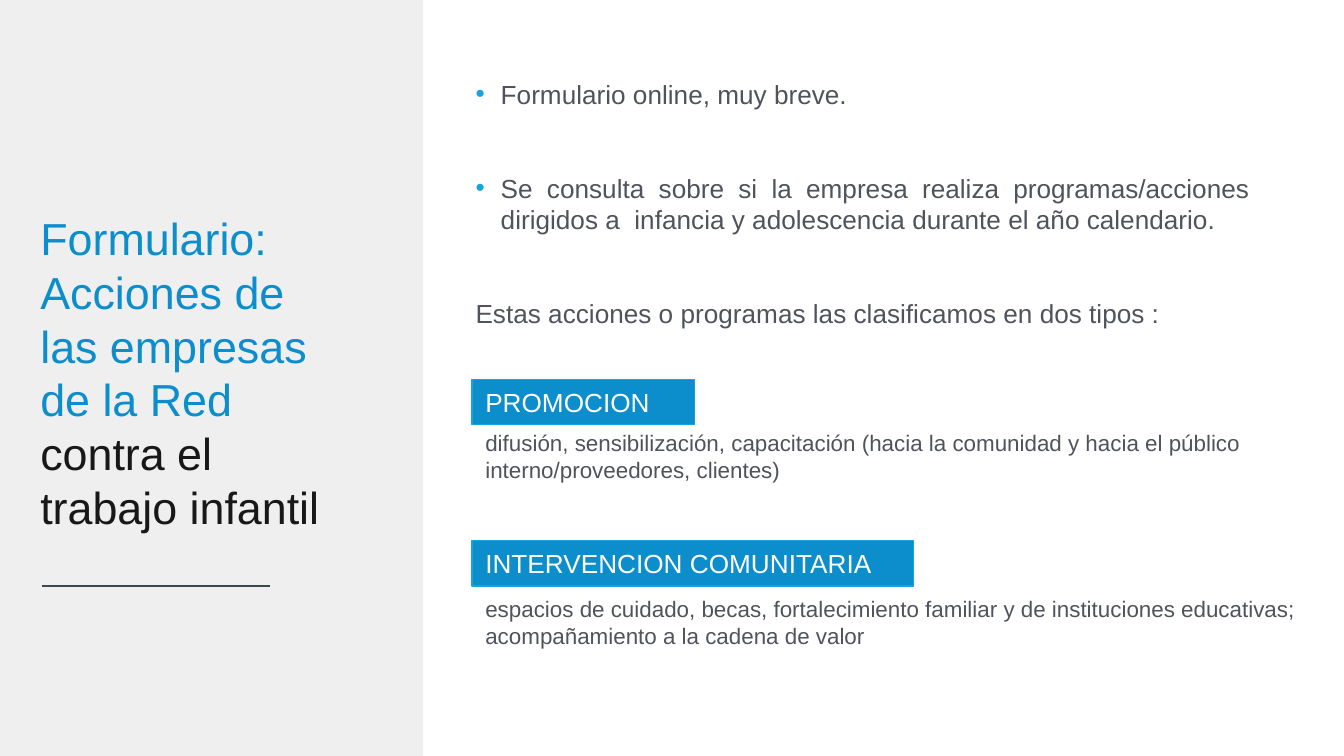
from dataclasses import dataclass

from lxml.etree import SubElement
from pptx import Presentation
from pptx.dml.color import RGBColor as RGB
from pptx.enum.shapes import MSO_CONNECTOR as CONN, MSO_SHAPE as SHAPE
from pptx.enum.text import MSO_ANCHOR as ANCHOR, MSO_AUTO_SIZE as AUTO, PP_ALIGN as ALIGN
from pptx.oxml.ns import qn
from pptx.util import Pt


@dataclass(frozen=True)
class Theme:
    """Colours, font and type sizes of the slide."""
    font: str = "Arial"
    panel: str = "EFEFEF"
    blue: str = "0C8DCC"
    accent: str = "14A4DE"
    dark: str = "181818"
    rule: str = "3A4950"
    body: str = "50535C"
    white: str = "FFFFFF"
    title_size: float = 24
    text_size: float = 14
    note_size: float = 12
    leading: float = 1.2


@dataclass(frozen=True)
class Box:
    """A rectangle in points."""
    left: float
    top: float
    width: float
    height: float

    def emu(self) -> tuple:
        """Return the four lengths for python-pptx."""
        return Pt(self.left), Pt(self.top), Pt(self.width), Pt(self.height)


@dataclass(frozen=True)
class Point:
    """A paragraph of the main text."""
    text: str
    bulleted: bool
    before: float


@dataclass(frozen=True)
class Category:
    """A type of action: its label and its explanation."""
    label: str
    label_box: Box
    note: str
    note_box: Box


T = Theme()
GAP = 2 * T.text_size * T.leading
POINTS = (
    Point("Formulario online, muy breve.", True, 0),
    Point("Se consulta sobre si la empresa realiza programas/acciones dirigidos a  "
          "infancia y adolescencia durante el año calendario.", True, GAP),
    Point("Estas acciones o programas las clasificamos en dos tipos :", False, GAP),
)
CATEGORIES = (
    Category("PROMOCION", Box(252.9, 203.2, 119.1, 24.3),
             "difusión, sensibilización, capacitación (hacia la comunidad y hacia "
             "el público interno/proveedores, clientes)", Box(252.9, 226.4, 445.7, 36)),
    Category("INTERVENCION COMUNITARIA", Box(252.9, 289.6, 236.5, 24.3),
             "espacios de cuidado, becas, fortalecimiento familiar y de instituciones "
             "educativas; acompañamiento a la cadena de valor", Box(252.9, 315.4, 452.2, 36)),
)


def add_run(p, text: str, size: float, color: str) -> None:
    """Append a formatted run and set the line pitch of its paragraph."""
    p.line_spacing = Pt(size * T.leading)
    r = p.add_run()
    r.text = text
    r.font.name, r.font.size = T.font, Pt(size)
    r.font.color.rgb = RGB.from_string(color)


def set_frame(tf, anchor=ANCHOR.TOP) -> None:
    """Give a text frame wrapping, a fixed size and an anchor."""
    tf.word_wrap = True
    tf.auto_size = AUTO.NONE
    tf.vertical_anchor = anchor


def add_rect(s, box: Box, fill: str, line: str = ""):
    """Draw a filled rectangle with an optional outline."""
    sp = s.shapes.add_shape(SHAPE.RECTANGLE, *box.emu())
    sp.shadow.inherit = False
    sp.fill.solid()
    sp.fill.fore_color.rgb = RGB.from_string(fill)
    if line:
        sp.line.color.rgb = RGB.from_string(line)
        sp.line.width = Pt(0.75)
    else:
        sp.line.fill.background()
    return sp


def add_text(s, box: Box):
    """Add an empty wrapped text box and return its frame."""
    tf = s.shapes.add_textbox(*box.emu()).text_frame
    set_frame(tf)
    return tf


def add_bullet(p) -> None:
    """Give a paragraph a hanging coloured bullet."""
    pPr = p._p.get_or_add_pPr()
    pPr.set("marL", str(Pt(13.5)))
    pPr.set("indent", str(-Pt(13.5)))
    color = SubElement(pPr, qn("a:buClr"))
    SubElement(color, qn("a:srgbClr"), val=T.accent)
    SubElement(pPr, qn("a:buFont"), typeface=T.font)
    SubElement(pPr, qn("a:buChar"), char="•")


def add_title(s) -> None:
    """Fill the title placeholder over the side panel."""
    sp = s.shapes.title
    sp._element.addprevious(add_rect(s, Box(0, 0, 226.7, 405), T.panel)._element)
    sp.left, sp.top, sp.width, sp.height = Box(14.4, 109.4, 176.4, 211).emu()
    tf = sp.text_frame
    set_frame(tf)
    first, second = tf.paragraphs[0], tf.add_paragraph()
    first.alignment = second.alignment = ALIGN.LEFT
    add_run(first, "Formulario:", T.title_size, T.blue)
    add_run(second, "Acciones de las empresas de la Red ", T.title_size, T.blue)
    add_run(second, "contra el trabajo infantil", T.title_size, T.dark)


def add_rule(s) -> None:
    """Draw the thin line under the title."""
    c = s.shapes.add_connector(CONN.STRAIGHT, Pt(144.9), Pt(313.9), Pt(22.5), Pt(313.9))
    c.line.color.rgb = RGB.from_string(T.rule)
    c.line.width = Pt(0.75)
    SubElement(c._element.spPr, qn("a:effectLst"))


def add_points(s, points: tuple[Point, ...]) -> None:
    """Write the justified main text."""
    tf = add_text(s, Box(247.7, 38.2, 429.1, 143.3))
    for i, point in enumerate(points):
        p = tf.add_paragraph() if i else tf.paragraphs[0]
        p.alignment = ALIGN.JUSTIFY
        p.space_before = Pt(point.before)
        add_run(p, point.text, T.text_size, T.body)
        if point.bulleted:
            add_bullet(p)


def add_category(s, category: Category) -> None:
    """Draw a category label with its explanation."""
    tf = add_rect(s, category.label_box, T.blue, T.accent).text_frame
    set_frame(tf, ANCHOR.MIDDLE)
    p = tf.paragraphs[0]
    p.alignment = ALIGN.LEFT
    add_run(p, category.label, T.text_size, T.white)
    p = add_text(s, category.note_box).paragraphs[0]
    add_run(p, category.note, T.note_size, T.body)


def main() -> None:
    """Build and save the slide."""
    prs = Presentation()
    prs.slide_width, prs.slide_height = Pt(720), Pt(405)
    s = prs.slides.add_slide(prs.slide_layouts[5])
    add_title(s)
    add_rule(s)
    add_points(s, POINTS)
    for category in CATEGORIES:
        add_category(s, category)
    prs.save("out.pptx")


if __name__ == "__main__":
    main()
